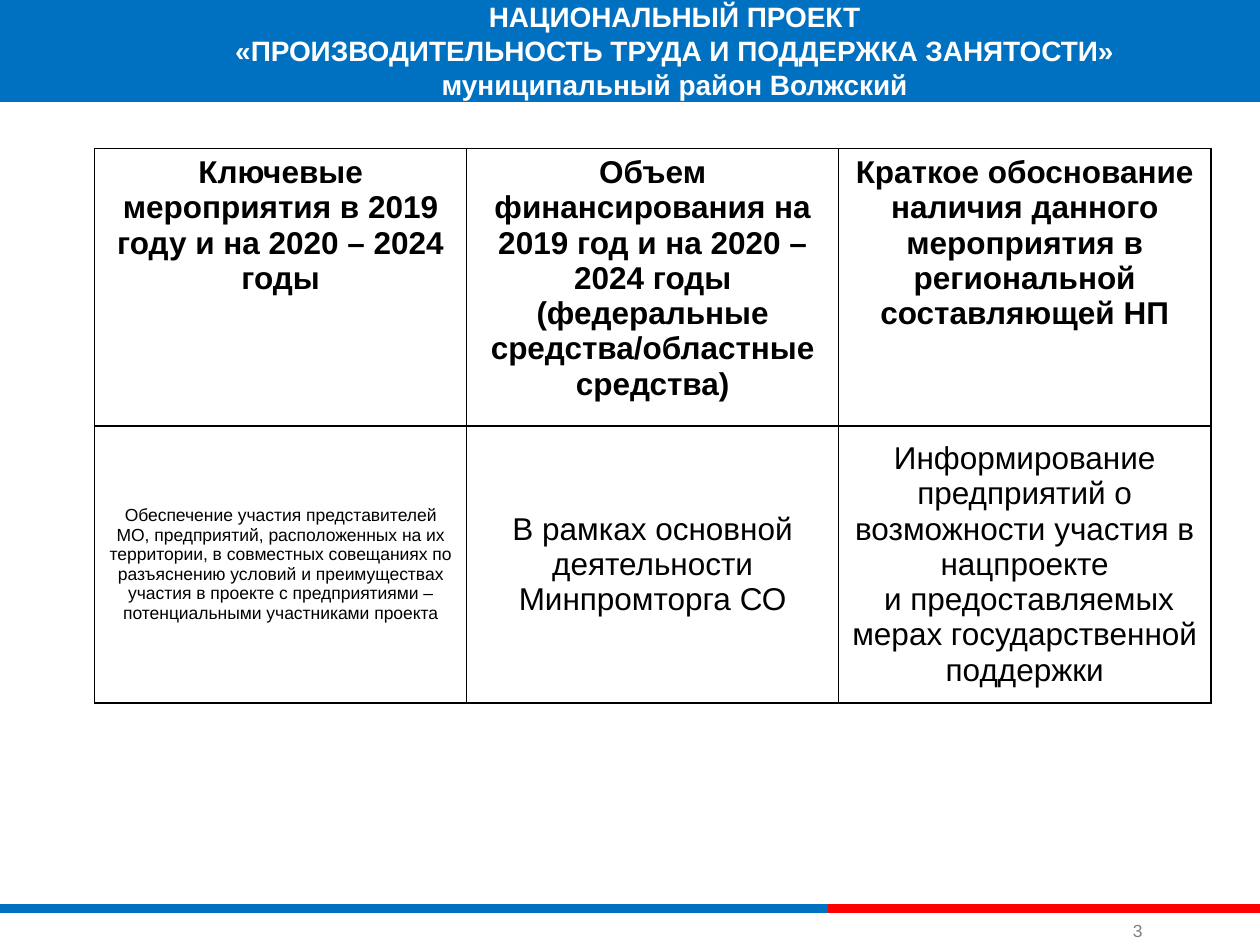
from lxml import etree
from pptx import Presentation
from pptx.dml.color import RGBColor
from pptx.enum.shapes import MSO_CONNECTOR, MSO_SHAPE
from pptx.enum.text import MSO_ANCHOR, MSO_AUTO_SIZE, PP_ALIGN
from pptx.oxml import parse_xml
from pptx.oxml.ns import nsdecls, qn
from pptx.util import Inches, Pt

BLUE = RGBColor(0x00, 0x70, 0xC1)
RED = RGBColor(0xFF, 0x00, 0x00)
WHITE = RGBColor(0xFF, 0xFF, 0xFF)
BLACK = RGBColor(0x00, 0x00, 0x00)
GRAY = RGBColor(0x80, 0x80, 0x80)


def write_text(frame, text, size=18, color=BLACK, bold=False,
               align=PP_ALIGN.CENTER, anchor=MSO_ANCHOR.TOP):
    """Fill a text frame, one paragraph per line of text."""
    frame.text = text
    frame.vertical_anchor = anchor
    for paragraph in frame.paragraphs:
        paragraph.alignment = align
        font = paragraph.font
        font.name, font.size, font.bold = "Arial", Pt(size), bold
        font.color.rgb = color


def fit_frame(frame):
    """Small equal margins and no wrapping."""
    frame.word_wrap = False
    frame.auto_size = MSO_AUTO_SIZE.NONE
    frame.margin_left = frame.margin_right = Inches(0.05)
    frame.margin_top = frame.margin_bottom = Inches(0.05)


presentation = Presentation()
presentation.slide_width = Inches(10)
presentation.slide_height = Inches(7.5)
slide = presentation.slides.add_slide(presentation.slide_layouts[5])
title = slide.shapes.title

# Header band, placed behind the title
band = slide.shapes.add_shape(
    MSO_SHAPE.RECTANGLE, Inches(0), Inches(-0.03), Inches(10), Inches(0.84))
band.shadow.inherit = False
band.fill.solid()
band.fill.fore_color.rgb = BLUE
band.line.fill.background()
title.element.addprevious(band.element)

# Title
title.left, title.top = Inches(1.72), Inches(-0.05)
title.width, title.height = Inches(7.27), Inches(0.91)
fit_frame(title.text_frame)
write_text(
    title.text_frame,
    "НАЦИОНАЛЬНЫЙ ПРОЕКТ\n"
    "«ПРОИЗВОДИТЕЛЬНОСТЬ ТРУДА И ПОДДЕРЖКА ЗАНЯТОСТИ»\n"
    "муниципальный район Волжский",
    size=16, color=WHITE, bold=True)

# Footer rule in two colours
for start, end, color in [(0, 6.57, BLUE), (6.57, 10, RED)]:
    rule = slide.shapes.add_connector(
        MSO_CONNECTOR.STRAIGHT, Inches(start), Inches(7.21), Inches(end), Inches(7.21))
    rule.line.color.rgb = color
    rule.line.width = Pt(5)
    etree.SubElement(rule.element.spPr, qn("a:effectLst"))

# Page number
page_number = slide.shapes.add_textbox(
    Inches(8.94), Inches(7.27), Inches(0.19), Inches(0.25))
fit_frame(page_number.text_frame)
write_text(page_number.text_frame, "3", size=10, color=GRAY,
           align=PP_ALIGN.LEFT, anchor=MSO_ANCHOR.BOTTOM)

# Table of measures
headers = [
    "Ключевые мероприятия в 2019 году и на 2020 – 2024 годы",
    "Объем финансирования на 2019 год и на 2020 – 2024 годы "
    "(федеральные средства/областные средства)",
    "Краткое обоснование наличия данного мероприятия в региональной составляющей НП",
]
measures = [
    "Обеспечение участия представителей МО, предприятий, расположенных на их "
    "территории, в совместных совещаниях по разъяснению условий и преимуществах "
    "участия в проекте с предприятиями – потенциальными участниками проекта",
    "В рамках основной деятельности Минпромторга СО",
    "Информирование предприятий о возможности участия в нацпроекте\n"
    " и предоставляемых мерах государственной поддержки",
]
table = slide.shapes.add_table(
    2, 3, Inches(0.75), Inches(1.18), Inches(8.86), Inches(4.4)).table

for column, (header, measure) in enumerate(zip(headers, measures)):
    write_text(table.cell(0, column).text_frame, header, bold=True)
    cell = table.cell(1, column)
    write_text(cell.text_frame, measure, size=10 if column == 0 else 18)
    cell.vertical_anchor = MSO_ANCHOR.MIDDLE

# Thin black borders and no fill
for cell in table.iter_cells():
    cell.fill.background()
    properties = cell._tc.get_or_add_tcPr()
    for position, side in enumerate(["lnL", "lnR", "lnT", "lnB"]):
        properties.insert(position, parse_xml(
            f'<a:{side} {nsdecls("a")} w="12700"><a:solidFill>'
            f'<a:srgbClr val="{BLACK}"/></a:solidFill></a:{side}>'))

presentation.save("out.pptx")
